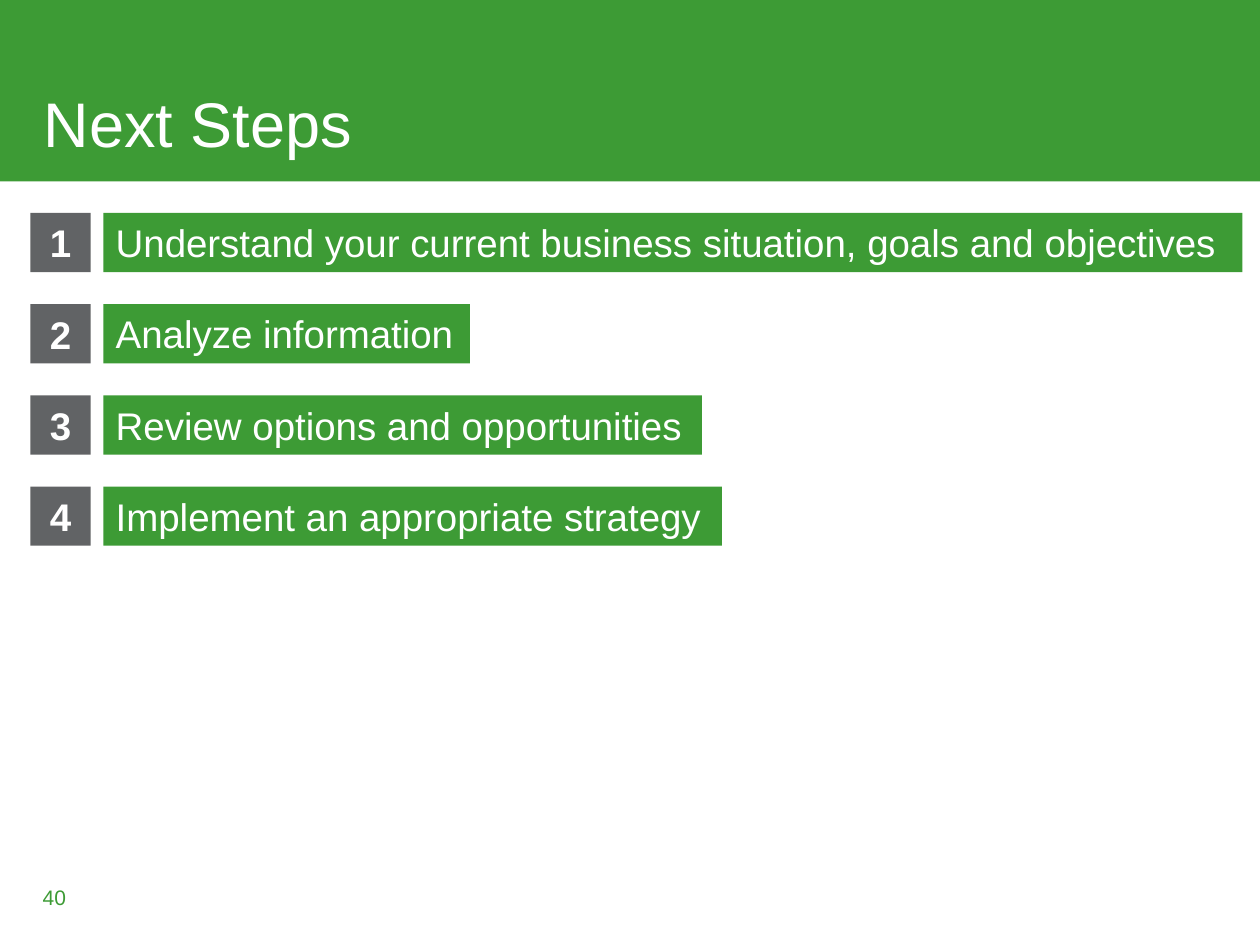
from pptx import Presentation
from pptx.dml.color import RGBColor
from pptx.enum.shapes import MSO_SHAPE
from pptx.enum.text import MSO_ANCHOR, PP_ALIGN
from pptx.util import Inches, Pt

GREEN = RGBColor(0x3D, 0x9B, 0x35)
GRAY = RGBColor(0x61, 0x63, 0x65)
WHITE = RGBColor(0xFF, 0xFF, 0xFF)
FONT = "Arial"

STEPS = [
    ("Understand your current business situation, goals and objectives", 9.04),
    ("Analyze information", 2.91),
    ("Review options and opportunities", 4.75),
    ("Implement an appropriate strategy", 4.91),
]
FIRST_STEP_TOP = 1.69
STEP_PITCH = 0.724
STEP_HEIGHT = 0.47
NUMBER_LEFT, NUMBER_WIDTH = 0.24, 0.48
LABEL_LEFT = 0.82


def write_text(holder, text, size=22, color=WHITE, bold=False,
               align=PP_ALIGN.LEFT, anchor=MSO_ANCHOR.MIDDLE, line_spacing=None):
    frame = holder.text_frame
    frame.word_wrap = True
    frame.vertical_anchor = anchor
    paragraph = frame.paragraphs[0]
    paragraph.alignment = align
    paragraph.line_spacing = line_spacing
    run = paragraph.add_run()
    run.text = text
    run.font.name = FONT
    run.font.size = Pt(size)
    run.font.bold = bold
    run.font.color.rgb = color


def add_block(shapes, left, top, width, height, color):
    """Add a plain filled rectangle without outline or shadow."""
    block = shapes.add_shape(MSO_SHAPE.RECTANGLE, Inches(left), Inches(top),
                             Inches(width), Inches(height))
    block.shadow.inherit = False
    block.fill.solid()
    block.fill.fore_color.rgb = color
    block.line.fill.background()
    return block


def add_label(shapes, left, top, width, height, text, **text_format):
    label = shapes.add_textbox(Inches(left), Inches(top), Inches(width), Inches(height))
    write_text(label, text, **text_format)


def add_step(slide, number, description, width):
    """Add one grouped row: the description bar and its number tile."""
    top = FIRST_STEP_TOP + (number - 1) * STEP_PITCH
    step = slide.shapes.add_group_shape()
    bar = add_block(step.shapes, LABEL_LEFT, top, width, STEP_HEIGHT, GREEN)
    write_text(bar, description, anchor=MSO_ANCHOR.TOP)
    tile = add_block(step.shapes, NUMBER_LEFT, top, NUMBER_WIDTH, STEP_HEIGHT, GRAY)
    write_text(tile, str(number), bold=True, align=PP_ALIGN.CENTER)


def main():
    presentation = Presentation()
    presentation.slide_width = Inches(10)
    presentation.slide_height = Inches(7.5)
    slide = presentation.slides.add_slide(presentation.slide_layouts[6])

    add_block(slide.shapes, 0, 0, 10, 1.44, GREEN)
    add_label(slide.shapes, 0.25, 0.16, 9.5, 1.17, "Next Steps", size=36,
              anchor=MSO_ANCHOR.BOTTOM, line_spacing=0.9)
    add_label(slide.shapes, 0.24, 6.92, 0.56, 0.4, "40", size=12, color=GREEN)
    for number, (description, width) in enumerate(STEPS, start=1):
        add_step(slide, number, description, width)

    presentation.save("out.pptx")


if __name__ == "__main__":
    main()
